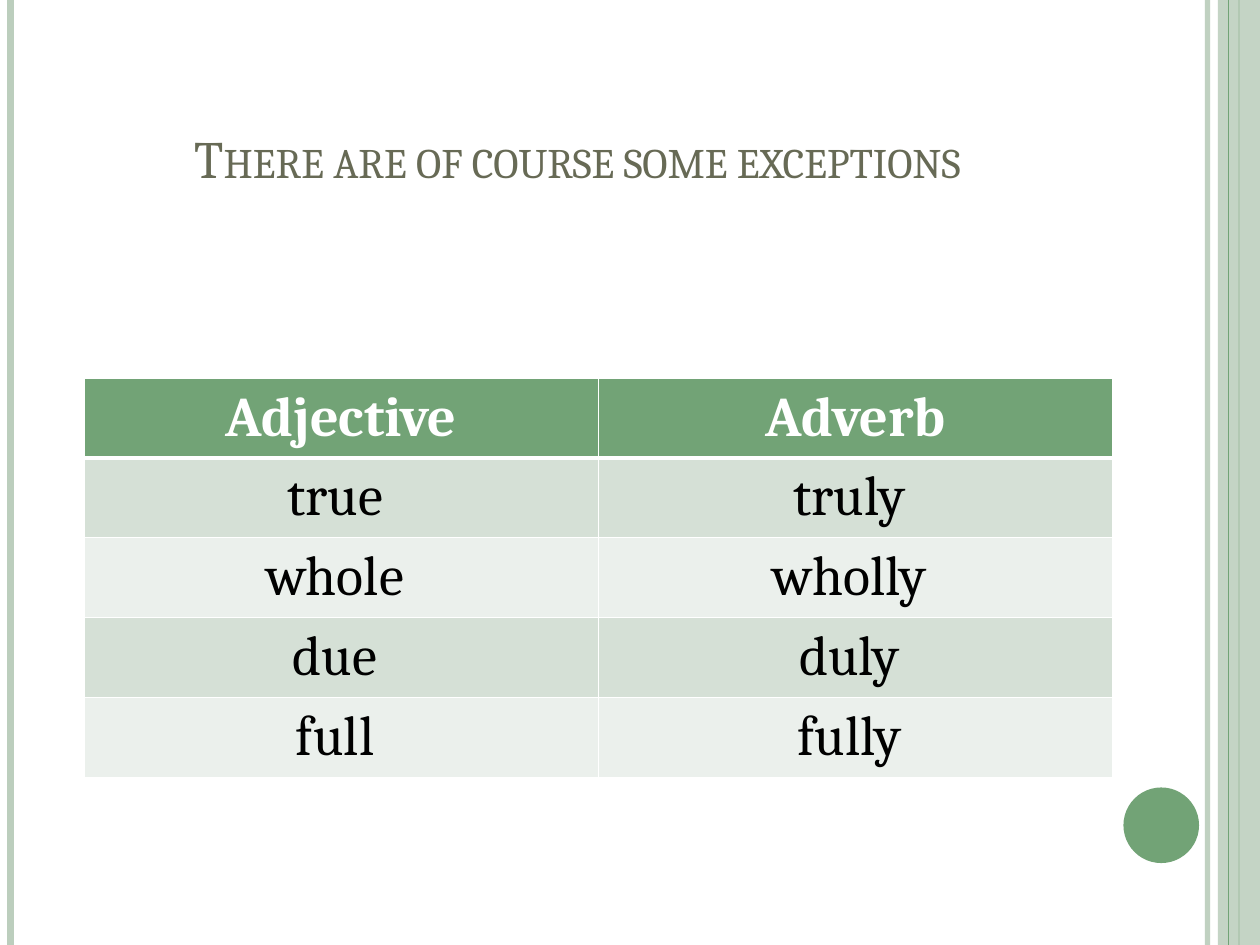
from dataclasses import dataclass
from typing import Optional

from lxml import etree
from pptx import Presentation
from pptx.dml.color import RGBColor
from pptx.enum.shapes import MSO_CONNECTOR, MSO_SHAPE
from pptx.enum.text import MSO_ANCHOR, PP_ALIGN
from pptx.oxml.ns import qn
from pptx.util import Pt

LINE = MSO_CONNECTOR.STRAIGHT
RECT, OVAL = MSO_SHAPE.RECTANGLE, MSO_SHAPE.OVAL
CENTER = PP_ALIGN.CENTER
BOTTOM, MIDDLE = MSO_ANCHOR.BOTTOM, MSO_ANCHOR.MIDDLE

GREEN = RGBColor(0x72, 0xA3, 0x76)
PALE_GREEN = RGBColor(0xBC, 0xCE, 0xBD)
BAND_DARK = RGBColor(0xD5, 0xE0, 0xD6)
BAND_LIGHT = RGBColor(0xEB, 0xF0, 0xEC)
OLIVE = RGBColor(0x67, 0x6A, 0x55)
WHITE = RGBColor(0xFF, 0xFF, 0xFF)
BLACK = RGBColor(0x00, 0x00, 0x00)

FONT = "Cambria"
SLIDE_W, SLIDE_H = 720, 540


@dataclass
class Rule:
    x: float
    width: float
    color: RGBColor
    alpha: Optional[int] = None


@dataclass
class Block:
    kind: int
    x: float
    y: float
    w: float
    h: float
    color: RGBColor
    alpha: Optional[int] = None


# Listed from back to front
DECOR = [
    Rule(690, 3, PALE_GREEN, 93),
    Rule(6, 4.5, PALE_GREEN),
    Rule(708, 1.5, GREEN),
    Block(RECT, 696, 0, 24, SLIDE_H, PALE_GREEN, 87),
    Rule(702, 0.75, GREEN),
    Block(OVAL, 642, 450, 43.2, 43.2, GREEN),
]

WORDS = [
    ("Adjective", "Adverb"),
    ("true ", "truly "),
    ("whole ", "wholly "),
    ("due ", "duly "),
    ("full ", "fully "),
]


def set_alpha(sp_pr, percent: Optional[int]) -> None:
    if percent is not None:
        clr = next(sp_pr.iter(qn("a:srgbClr")))
        etree.SubElement(clr, qn("a:alpha"), val=str(percent * 1000))


def draw_rule(slide, rule: Rule) -> None:
    c = slide.shapes.add_connector(LINE, Pt(rule.x), 0, Pt(rule.x), Pt(SLIDE_H))
    c.line.color.rgb = rule.color
    c.line.width = Pt(rule.width)
    sp_pr = c._element.spPr
    set_alpha(sp_pr, rule.alpha)
    etree.SubElement(sp_pr, qn("a:effectLst"))


def draw_block(slide, b: Block) -> None:
    sp = slide.shapes.add_shape(b.kind, Pt(b.x), Pt(b.y), Pt(b.w), Pt(b.h))
    sp.shadow.inherit = False
    sp.fill.solid()
    sp.fill.fore_color.rgb = b.color
    sp.line.fill.background()
    set_alpha(sp._element.spPr, b.alpha)


def write(p, text: str, size: float, color: RGBColor, bold: bool = False) -> None:
    p.add_run().text = text
    p.alignment = CENTER
    p.font.name = FONT
    p.font.size = Pt(size)
    p.font.bold = bold
    p.font.color.rgb = color


def draw_title(slide, text: str) -> None:
    sp = slide.shapes.add_textbox(Pt(36), Pt(21.6), Pt(588), Pt(90))
    tf = sp.text_frame
    tf.word_wrap = True
    tf.vertical_anchor = BOTTOM
    p = tf.paragraphs[0]
    write(p, text, 30, OLIVE)
    p._p.pPr.find(qn("a:defRPr")).set("cap", "small")


def set_borders(cell, bottom: float) -> None:
    tc_pr = cell._tc.get_or_add_tcPr()
    widths = {"lnL": 1, "lnR": 1, "lnT": 1, "lnB": bottom}
    for i, (tag, width) in enumerate(widths.items()):
        ln = etree.Element(qn(f"a:{tag}"), w=str(Pt(width)))
        fill = etree.SubElement(ln, qn("a:solidFill"))
        etree.SubElement(fill, qn("a:srgbClr"), val=str(WHITE))
        tc_pr.insert(i, ln)


def draw_table(slide, rows: list[tuple[str, str]]) -> None:
    frame = slide.shapes.add_table(
        len(rows), len(rows[0]), Pt(48), Pt(216), Pt(588), Pt(44 * len(rows)))
    for i, row in enumerate(rows):
        header = i == 0
        band = GREEN if header else BAND_DARK if i % 2 else BAND_LIGHT
        for j, text in enumerate(row):
            cell = frame.table.cell(i, j)
            cell.vertical_anchor = MIDDLE
            cell.fill.solid()
            cell.fill.fore_color.rgb = band
            set_borders(cell, 3 if header else 1)
            write(cell.text_frame.paragraphs[0], text, 32,
                  WHITE if header else BLACK, header)


def main() -> None:
    prs = Presentation()
    prs.slide_width, prs.slide_height = Pt(SLIDE_W), Pt(SLIDE_H)
    s = prs.slides.add_slide(prs.slide_layouts[6])

    # Side bars and page disc
    for item in DECOR:
        if isinstance(item, Rule):
            draw_rule(s, item)
        else:
            draw_block(s, item)

    # Title and word table
    draw_title(s, "There are of course some exceptions")
    draw_table(s, WORDS)

    prs.save("out.pptx")


if __name__ == "__main__":
    main()
